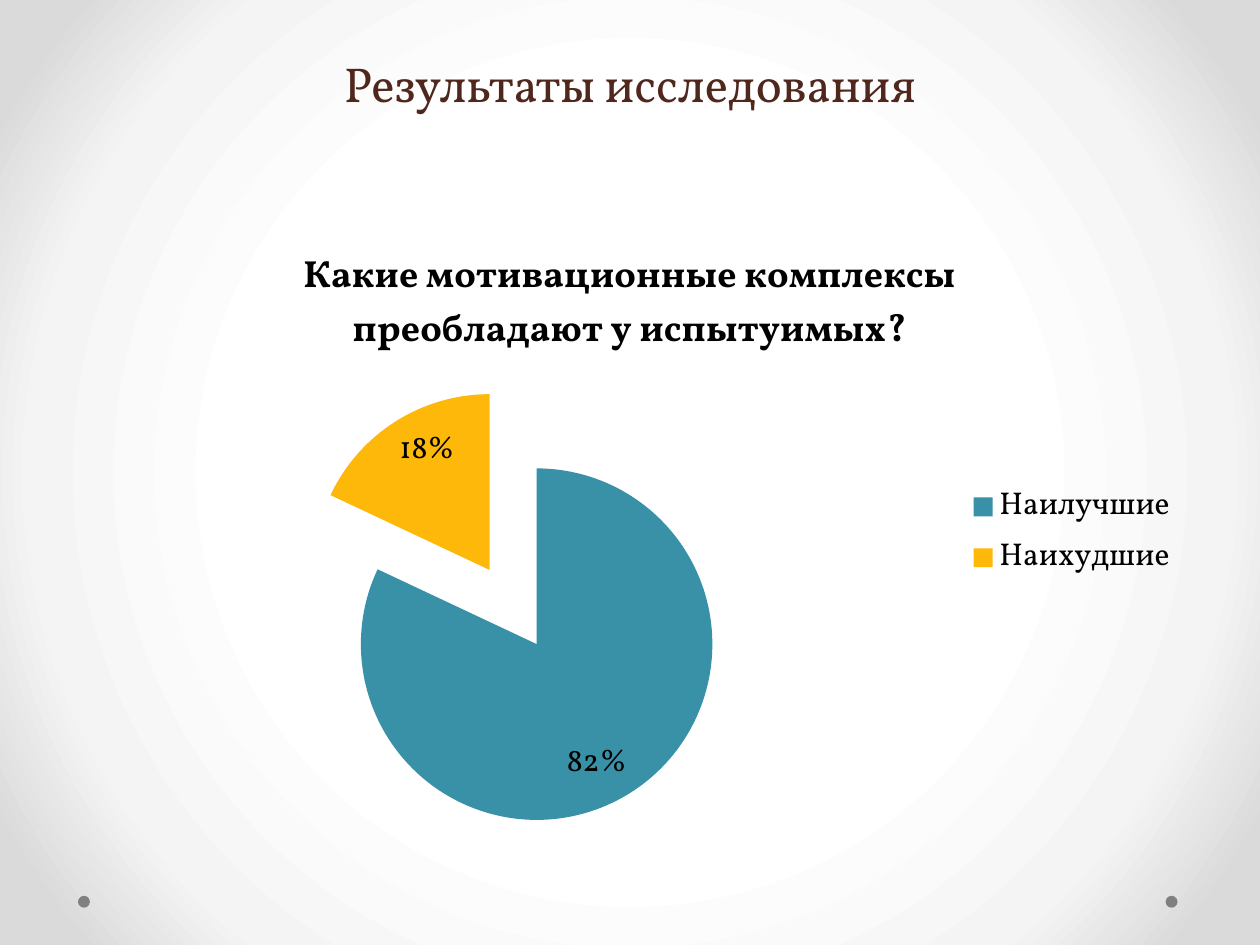
from dataclasses import dataclass
from typing import Any

import lxml.etree
import pptx
import pptx.chart.data
import pptx.dml.color
import pptx.enum.chart
import pptx.enum.shapes
import pptx.enum.text
import pptx.oxml.ns
import pptx.util

Pt = pptx.util.Pt
RGBColor = pptx.dml.color.RGBColor
qn = pptx.oxml.ns.qn

BLACK = RGBColor(0x00, 0x00, 0x00)
BROWN = RGBColor(0x4F, 0x27, 0x1C)
GRAY = RGBColor(0x80, 0x80, 0x80)
TEAL = RGBColor(0x38, 0x91, 0xA7)
AMBER = RGBColor(0xFE, 0xB8, 0x0A)
WHITE = RGBColor(0xFF, 0xFF, 0xFF)
PALE_GRAY = RGBColor(0xF4, 0xF4, 0xF4)
LIGHT_GRAY = RGBColor(0xDA, 0xDA, 0xDA)

FONT_NAME = "Vollkorn"
QUESTION = "Какие мотивационные комплексы преобладают у испытуимых?"
DOT_SIZE = 6.8
DOT_TOP = 511.9
EXPLOSION = 25


@dataclass(frozen=True)
class GradientStop:
    percent: int
    color: RGBColor


@dataclass(frozen=True)
class Slice:
    name: str
    value: int
    color: RGBColor


STOPS = [
    GradientStop(50, WHITE),
    GradientStop(76, PALE_GRAY),
    GradientStop(92, LIGHT_GRAY),
]
SLICES = [Slice("Наилучшие ", 82, TEAL), Slice("Наихудшие ", 18, AMBER)]
DOT_LEFTS = [666.1, 44.6]


def apply_format(target: Any, values: dict[str, Any]) -> None:
    for name, value in values.items():
        setattr(target, name, value)


def format_font(font: Any, size: float, color: RGBColor, bold: bool = False) -> None:
    apply_format(font, {"name": FONT_NAME, "size": Pt(size), "bold": bold})
    font.color.rgb = color


def paint_background(slide: Any) -> None:
    slide.background.fill.gradient()
    gradient = next(slide.element.iter(qn("a:gradFill")))
    for child in list(gradient):
        gradient.remove(child)
    stop_list = lxml.etree.SubElement(gradient, qn("a:gsLst"))
    for stop in STOPS:
        entry = lxml.etree.SubElement(stop_list, qn("a:gs"), pos=str(stop.percent * 1000))
        lxml.etree.SubElement(entry, qn("a:srgbClr"), val=str(stop.color))
    circle = lxml.etree.SubElement(gradient, qn("a:path"), path="circle")
    center = dict.fromkeys("ltrb", "50000")
    lxml.etree.SubElement(circle, qn("a:fillToRect"), center)


def add_dot(slide: Any, left: float) -> None:
    dot = slide.shapes.add_shape(
        pptx.enum.shapes.MSO_SHAPE.OVAL, Pt(left), Pt(DOT_TOP), Pt(DOT_SIZE), Pt(DOT_SIZE)
    )
    dot.shadow.inherit = False
    dot.fill.solid()
    dot.fill.fore_color.rgb = GRAY
    dot.line.fill.background()


def write_title(slide: Any) -> None:
    title = slide.shapes.title
    apply_format(title, {"left": Pt(36), "top": Pt(0), "width": Pt(648), "height": Pt(126)})
    frame = title.text_frame
    frame.text = "Результаты исследования"
    apply_format(frame, {
        "word_wrap": True,
        "auto_size": pptx.enum.text.MSO_AUTO_SIZE.NONE,
        "vertical_anchor": pptx.enum.text.MSO_ANCHOR.BOTTOM,
        "margin_bottom": Pt(61.6),
    })
    paragraph = frame.paragraphs[0]
    apply_format(paragraph, {
        "alignment": pptx.enum.text.PP_ALIGN.CENTER,
        "line_spacing": Pt(58),
        "space_before": Pt(0),
    })
    format_font(paragraph.runs[0].font, 28, BROWN)


def add_pie(slide: Any) -> None:
    chart_data = pptx.chart.data.CategoryChartData()
    chart_data.categories = [item.name for item in SLICES]
    chart_data.add_series(QUESTION, [item.value for item in SLICES])
    chart = slide.shapes.add_chart(
        pptx.enum.chart.XL_CHART_TYPE.PIE, Pt(36), Pt(126), Pt(648), Pt(356.4), chart_data
    ).chart
    format_font(chart.font, 18, BLACK)

    chart.has_title = True
    chart.chart_title.include_in_layout = False
    chart.chart_title.text_frame.text = QUESTION
    title_run = chart.chart_title.text_frame.paragraphs[0].runs[0]
    format_font(title_run.font, 21.6, BLACK, bold=True)

    chart.has_legend = True
    apply_format(chart.legend, {
        "position": pptx.enum.chart.XL_LEGEND_POSITION.RIGHT,
        "include_in_layout": False,
    })

    plot = chart.plots[0]
    apply_format(plot, {"vary_by_categories": True, "has_data_labels": True})
    apply_format(plot.data_labels, {
        "show_percentage": True,
        "show_value": False,
        "number_format": "0%",
        "number_format_is_linked": False,
        "position": pptx.enum.chart.XL_LABEL_POSITION.INSIDE_END,
    })
    series = plot.series[0]
    for index, item in enumerate(SLICES):
        fill = series.points[index].format.fill
        fill.solid()
        fill.fore_color.rgb = item.color
    explosion = lxml.etree.Element(qn("c:explosion"), val=str(EXPLOSION))
    series._element.find(qn("c:dPt")).addprevious(explosion)


def main() -> None:
    presentation = pptx.Presentation()
    apply_format(presentation, {"slide_width": Pt(720), "slide_height": Pt(540)})
    slide = presentation.slides.add_slide(presentation.slide_layouts.get_by_name("Title Only"))
    paint_background(slide)
    for left in DOT_LEFTS:
        add_dot(slide, left)
    write_title(slide)
    add_pie(slide)
    presentation.save("out.pptx")


if __name__ == "__main__":
    main()
